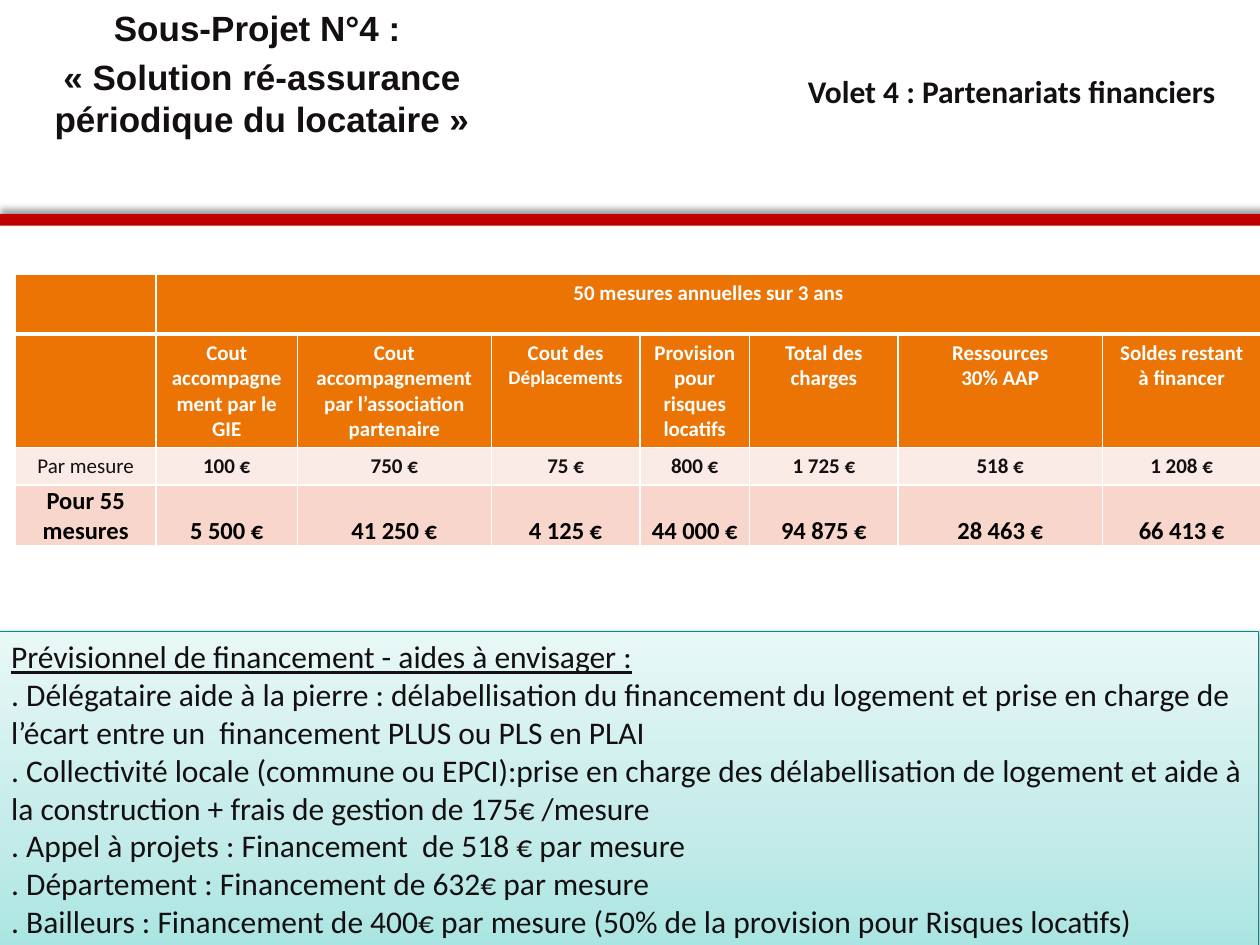
"""Build the slide on financial partnerships for sub-project 4."""
from dataclasses import dataclass

from pptx import Presentation
from pptx.dml.color import RGBColor
from pptx.enum.shapes import MSO_SHAPE
from pptx.enum.text import MSO_ANCHOR, MSO_AUTO_SIZE, PP_ALIGN
from pptx.oxml import parse_xml
from pptx.oxml.ns import nsdecls, qn
from pptx.util import Inches, Pt


@dataclass(frozen=True)
class Theme:
    ink: str = "140F11"
    black: str = "000000"
    white: str = "FFFFFF"
    red: str = "C00000"
    orange: str = "EC7404"
    pale: str = "FBEBE7"
    rose: str = "F8D6CC"
    teal: str = "008B88"
    panel: tuple = ((0, "A9E5E2"), (35, "C3EBE9"), (100, "E8F8F7"))
    title_font: str = "Arial"
    body_font: str = "Calibri"
    title: int = 20
    body: int = 18
    total: int = 14
    cell: int = 12
    small: int = 11


class Page:
    columns, rows = 100, 75

    def __init__(self, deck, theme):
        self.theme = theme
        self.unit_x = deck.slide_width / self.columns
        self.unit_y = deck.slide_height / self.rows
        self.shapes = deck.slides.add_slide(deck.slide_layouts[6]).shapes

    def place(self, left, top, width, height):
        return (round(left * self.unit_x), round(top * self.unit_y),
                round(width * self.unit_x), round(height * self.unit_y))

    def add_text(self, frame, paragraphs, size, color=None, font=None, bold=False,
                 align=PP_ALIGN.CENTER, gap=0):
        for index, spans in enumerate(paragraphs):
            para = frame.add_paragraph() if index else frame.paragraphs[0]
            para.alignment = align
            if index and gap:
                para.space_before = Pt(gap)
            for words, changes in spans:
                span = para.add_run()
                span.text = words
                span.font.name = font or self.theme.body_font
                span.font.size = Pt(changes.get("size", size))
                span.font.bold = bold
                span.font.underline = changes.get("underline", False)
                span.font.color.rgb = RGBColor.from_string(color or self.theme.ink)

    def text(self, at, lines, size, grow=False, **style):
        box = self.shapes.add_textbox(*self.place(*at))
        box.text_frame.word_wrap = True
        if grow:
            box.text_frame.auto_size = MSO_AUTO_SIZE.SHAPE_TO_FIT_TEXT
        self.add_text(box.text_frame, [[(line, {})] for line in lines], size, **style)

    def rectangle(self, at, shadow):
        shape = self.shapes.add_shape(MSO_SHAPE.RECTANGLE, *self.place(*at))
        shape.shadow.inherit = False
        alpha, blur, distance, angle = shadow
        shape._element.spPr.find(qn("a:effectLst")).append(parse_xml(
            f'<a:outerShdw {nsdecls("a")} blurRad="{Pt(blur)}" dist="{Pt(distance)}" '
            f'dir="{angle * 60000}" rotWithShape="0"><a:srgbClr val="{self.theme.black}">'
            f'<a:alpha val="{alpha * 1000}"/></a:srgbClr></a:outerShdw>'))
        return shape

    def bar(self, at):
        shape = self.rectangle(at, (40, 4, 3, 270))
        shape.fill.solid()
        shape.fill.fore_color.rgb = RGBColor.from_string(self.theme.red)
        shape.line.fill.background()

    def panel(self, at, heading, lines):
        shape = self.rectangle(at, (38, 3.1, 1.6, 90))
        shape.fill.gradient()
        shape.fill.gradient_angle = 90
        stops = shape._element.spPr.find(qn("a:gradFill")).find(qn("a:gsLst"))
        for stop in list(stops):
            stops.remove(stop)
        for share, color in self.theme.panel:
            stops.append(parse_xml(f'<a:gs {nsdecls("a")} pos="{share * 1000}">'
                                   f'<a:srgbClr val="{color}"/></a:gs>'))
        shape.line.color.rgb = RGBColor.from_string(self.theme.teal)
        shape.line.width = Pt(0.75)
        frame = shape.text_frame
        frame.word_wrap = True
        frame.auto_size = MSO_AUTO_SIZE.SHAPE_TO_FIT_TEXT
        frame.vertical_anchor = MSO_ANCHOR.TOP
        self.add_text(frame, [[(heading, {"underline": True})]] + [[(line, {})] for line in lines],
                      self.theme.body, align=PP_ALIGN.LEFT)

    def cell(self, cell, fill, paragraphs, bottom=1, anchor=None, **style):
        properties = cell._tc.get_or_add_tcPr()
        for side, width in (("L", 1), ("R", 1), ("T", 1), ("B", bottom)):
            properties.append(parse_xml(
                f'<a:ln{side} {nsdecls("a")} w="{Pt(width)}"><a:solidFill>'
                f'<a:srgbClr val="{self.theme.white}"/></a:solidFill></a:ln{side}>'))
        cell.fill.solid()
        cell.fill.fore_color.rgb = RGBColor.from_string(fill)
        if anchor is not None:
            cell.vertical_anchor = anchor
            cell.margin_left = cell.margin_right = cell.margin_top = Inches(0.01)
            cell.margin_bottom = 0
        self.add_text(cell.text_frame, paragraphs, **style)

    def cost_table(self, at, widths, heights, caption, headings, unit_costs, totals):
        theme = self.theme
        table = self.shapes.add_table(len(heights), len(widths), *self.place(*at)).table
        for column, width in zip(table.columns, widths):
            column.width = round(width * self.unit_x)
        for row, height in zip(table.rows, heights):
            row.height = round(height * self.unit_y)
        table.cell(0, 1).merge(table.cell(0, len(widths) - 1))
        header = dict(fill=theme.orange, size=theme.cell, color=theme.white, bold=True)
        for index, heading in enumerate(headings):
            top = [[(caption, {})]] if index == 1 else []
            self.cell(table.cell(0, index), paragraphs=top, bottom=3, **header)
            self.cell(table.cell(1, index), paragraphs=heading, **header)
            self.cell(table.cell(2, index), theme.pale, [[(unit_costs[index], {})]],
                      anchor=MSO_ANCHOR.MIDDLE if index else None,
                      size=theme.cell, bold=index > 0)
            self.cell(table.cell(3, index), theme.rose, [[(totals[index], {})]],
                      anchor=MSO_ANCHOR.BOTTOM, size=theme.total, color=theme.black, bold=True)


def main():
    deck = Presentation()
    deck.slide_width, deck.slide_height = Inches(10), Inches(7.5)
    theme = Theme()
    page = Page(deck, theme)
    page.bar((0, 17, 100.8, 0.9))
    page.text((-0.3, 0, 42.2, 9.5),
              ["Sous-Projet N°4 : ", "« Solution ré-assurance périodique du locataire »"],
              theme.title, font=theme.title_font, bold=True, gap=4)
    page.text((62.6, 5.2, 35.4, 4), ["Volet 4 : Partenariats financiers"],
              theme.body, grow=True, bold=True)
    headings = [
        [],
        [[("Cout accompagnement par le GIE", {})]],
        [[("Cout accompagnement par l’association partenaire", {})]],
        [[("Cout des ", {}), ("Déplacements", {"size": theme.small})]],
        [[("Provision pour risques locatifs", {})]],
        [[("Total des charges", {})]],
        [[("Ressources", {})], [("30% AAP", {})]],
        [[("Soldes restant à financer", {})]],
    ]
    page.cost_table(
        (1.2, 21.8, 98.8, 21.5),
        (11.2, 11.2, 15.4, 11.8, 8.7, 11.8, 16.2, 12.6), (4.7, 9, 3, 4.8),
        "50 mesures annuelles sur 3 ans", headings,
        ("Par mesure", "100 €", "750 €", "75 €", "800 €", "1 725 €", "518 €", "1 208 €"),
        ("Pour 55 mesures", "5 500 €", "41 250 €", "4 125 €", "44 000 €", "94 875 €",
         "28 463 €", "66 413 €"))
    page.panel((-0.1, 50.1, 100, 25.2), "Prévisionnel de financement - aides à envisager :", [
        ". Délégataire aide à la pierre : délabellisation du financement du logement et prise "
        "en charge de l’écart entre un  financement PLUS ou PLS en PLAI",
        ". Collectivité locale (commune ou EPCI):prise en charge des délabellisation de logement "
        "et aide à la construction + frais de gestion de 175€ /mesure",
        ". Appel à projets : Financement  de 518 € par mesure",
        ". Département : Financement de 632€ par mesure",
        ". Bailleurs : Financement de 400€ par mesure (50% de la provision pour Risques locatifs)",
    ])
    deck.save("out.pptx")


if __name__ == "__main__":
    main()
